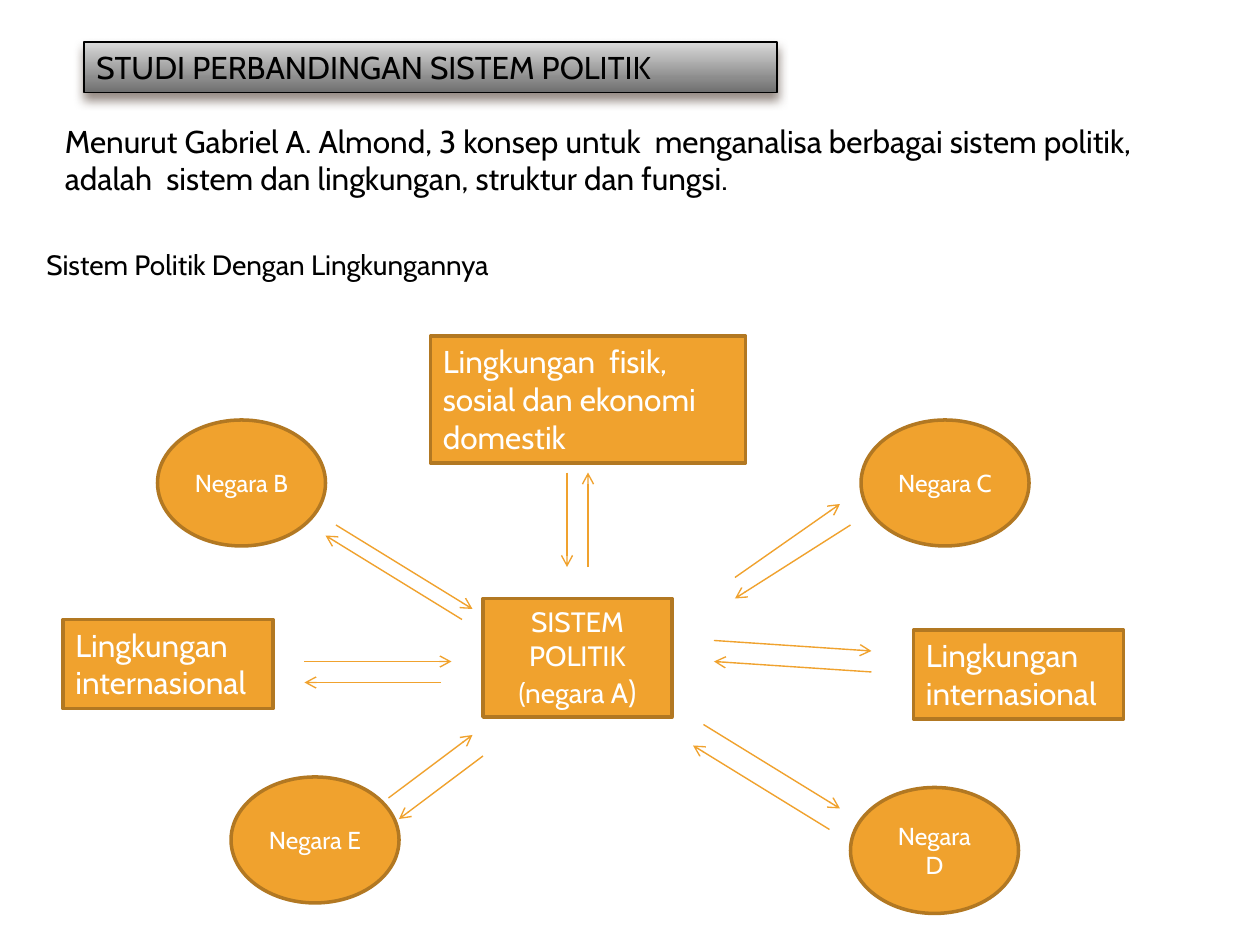
from lxml import etree
from pptx import Presentation
from pptx.dml.color import RGBColor as RGB
from pptx.enum.shapes import MSO_CONNECTOR as CONN, MSO_SHAPE as SHAPE
from pptx.enum.text import MSO_ANCHOR as ANCHOR, MSO_AUTO_SIZE as FIT, PP_ALIGN as ALIGN
from pptx.oxml import parse_xml
from pptx.oxml.ns import nsdecls, qn
from pptx.util import Inches, Pt

COLORS = {"text": "000000", "light": "FFFFFF", "fill": "F0A22E",
          "edge": "B27822", "shadow": "4E3B30"}
TITLE_STOPS = [(0, "DADADA"), (72, "8C8C8C"), (100, "707070")]
FONT = "Cabin"
THIN, THICK = 0.79, 2
OVAL = (16, 12)
SIDE_BOX = (20, 8.5)


def cell(n):
    """Length of n grid cells; the slide has 120 columns and 90 rows."""
    return Inches(n / 12)


def rgb(name):
    return RGB.from_string(COLORS[name])


def write(sp, paragraphs, color, align=ALIGN.LEFT, anchor=ANCHOR.TOP, fit=FIT.SHAPE_TO_FIT_TEXT):
    """Fill a shape with paragraphs, each a list of (text, size) runs."""
    tf = sp.text_frame
    for name, value in {"word_wrap": True, "auto_size": fit, "vertical_anchor": anchor}.items():
        setattr(tf, name, value)
    for i, runs in enumerate(paragraphs):
        p = tf.add_paragraph() if i else tf.paragraphs[0]
        p.alignment = align
        for text, size in runs:
            r = p.add_run()
            r.text = text
            for name, value in {"name": FONT, "size": Pt(size)}.items():
                setattr(r.font, name, value)
            r.font.color.rgb = rgb(color)


def add_label(s, box, text, size, align=ALIGN.LEFT):
    sp = s.shapes.add_textbox(*map(cell, box))
    write(sp, [[(text, size)]], "text", align)


def add_node(s, kind, box, paragraphs, **layout):
    sp = s.shapes.add_shape(kind, *map(cell, box))
    sp.shadow.inherit = False
    sp.fill.solid()
    sp.fill.fore_color.rgb = rgb("fill")
    sp.line.color.rgb = rgb("edge")
    sp.line.width = Pt(THICK)
    write(sp, paragraphs, "light", **layout)


def add_title(s, box, text):
    sp = s.shapes.add_shape(SHAPE.RECTANGLE, *map(cell, box))
    sp.shadow.inherit = False
    sp.line.color.rgb = rgb("text")
    sp.line.width = Pt(THIN)
    # Three-stop vertical gradient
    stops = "".join(f'<a:gs pos="{pos * 1000}"><a:srgbClr val="{color}"/></a:gs>'
                    for pos, color in TITLE_STOPS)
    sp_pr = sp._element.spPr
    sp_pr.find(qn("a:prstGeom")).addnext(parse_xml(
        f'<a:gradFill {nsdecls("a")}><a:gsLst>{stops}</a:gsLst>'
        '<a:lin ang="5400000" scaled="0"/></a:gradFill>'))
    # Soft shadow below
    sp_pr.find(qn("a:effectLst")).append(parse_xml(
        f'<a:outerShdw {nsdecls("a")} blurRad="{Pt(6)}" dist="{Pt(4)}" dir="5400000" '
        f'rotWithShape="0"><a:srgbClr val="{COLORS["shadow"]}">'
        '<a:alpha val="60000"/></a:srgbClr></a:outerShdw>'))
    write(sp, [[(text, 18)]], "text")


def add_arrow(s, ends):
    cx = s.shapes.add_connector(CONN.STRAIGHT, *map(cell, ends))
    cx.line.color.rgb = rgb("fill")
    cx.line.width = Pt(THIN)
    etree.SubElement(cx.line._get_or_add_ln(), qn("a:tailEnd"), type="arrow")
    etree.SubElement(cx._element.spPr, qn("a:effectLst"))


def main():
    prs = Presentation()
    prs.slide_width, prs.slide_height = cell(120), cell(90)
    s = prs.slides.add_slide(prs.slide_layouts[6])

    # Heading and introduction
    add_title(s, (8, 4, 66, 4.8), "STUDI PERBANDINGAN SISTEM POLITIK")
    add_label(s, (5, 11, 107, 8.5),
              "Menurut Gabriel A. Almond, 3 konsep untuk  menganalisa berbagai sistem politik, "
              "adalah  sistem dan lingkungan, struktur dan fungsi.", 18)
    add_label(s, (0, 23, 51, 4.4), "Sistem Politik Dengan Lingkungannya", 16, ALIGN.CENTER)

    # Political system in the centre
    add_node(s, SHAPE.RECTANGLE, (46, 57, 18, 11.3),
             [[("SISTEM POLITIK", 16)], [("(negara A", 16), (")", 18)]], align=ALIGN.CENTER)

    # Environments
    for box, text in [
        ((41, 32, 30, 12.1), "Lingkungan  fisik, sosial dan ekonomi domestik"),
        ((6, 59, *SIDE_BOX), "Lingkungan internasional"),
        ((87, 60, *SIDE_BOX), "Lingkungan internasional"),
    ]:
        add_node(s, SHAPE.RECTANGLE, box, [[(text, 18)]])

    # Other countries
    for letter, x, y in [("B", 15, 40), ("E", 22, 74), ("D", 81, 75), ("C", 82, 40)]:
        add_node(s, SHAPE.OVAL, (x, y, *OVAL), [[(f"Negara {letter}", 14)]],
                 align=ALIGN.CENTER, anchor=ANCHOR.MIDDLE, fit=FIT.NONE)

    # Exchange arrows, one pair per neighbour
    for pair in [
        ((32, 50, 45, 58), (44, 59, 31, 51)),  # Negara B
        ((54, 45, 54, 54), (56, 54, 56, 45)),  # domestic environment
        ((79, 79, 66, 71), (67, 69, 80, 77)),  # Negara D
        ((68, 61, 83, 62), (83, 64, 68, 63)),  # international, right
        ((42, 65, 29, 65), (29, 63, 43, 63)),  # international, left
        ((46, 72, 38, 78), (37, 76, 45, 70)),  # Negara E
        ((70, 55, 80, 48), (81, 50, 70, 57)),  # Negara C
    ]:
        for ends in pair:
            add_arrow(s, ends)

    prs.save("out.pptx")


if __name__ == "__main__":
    main()
